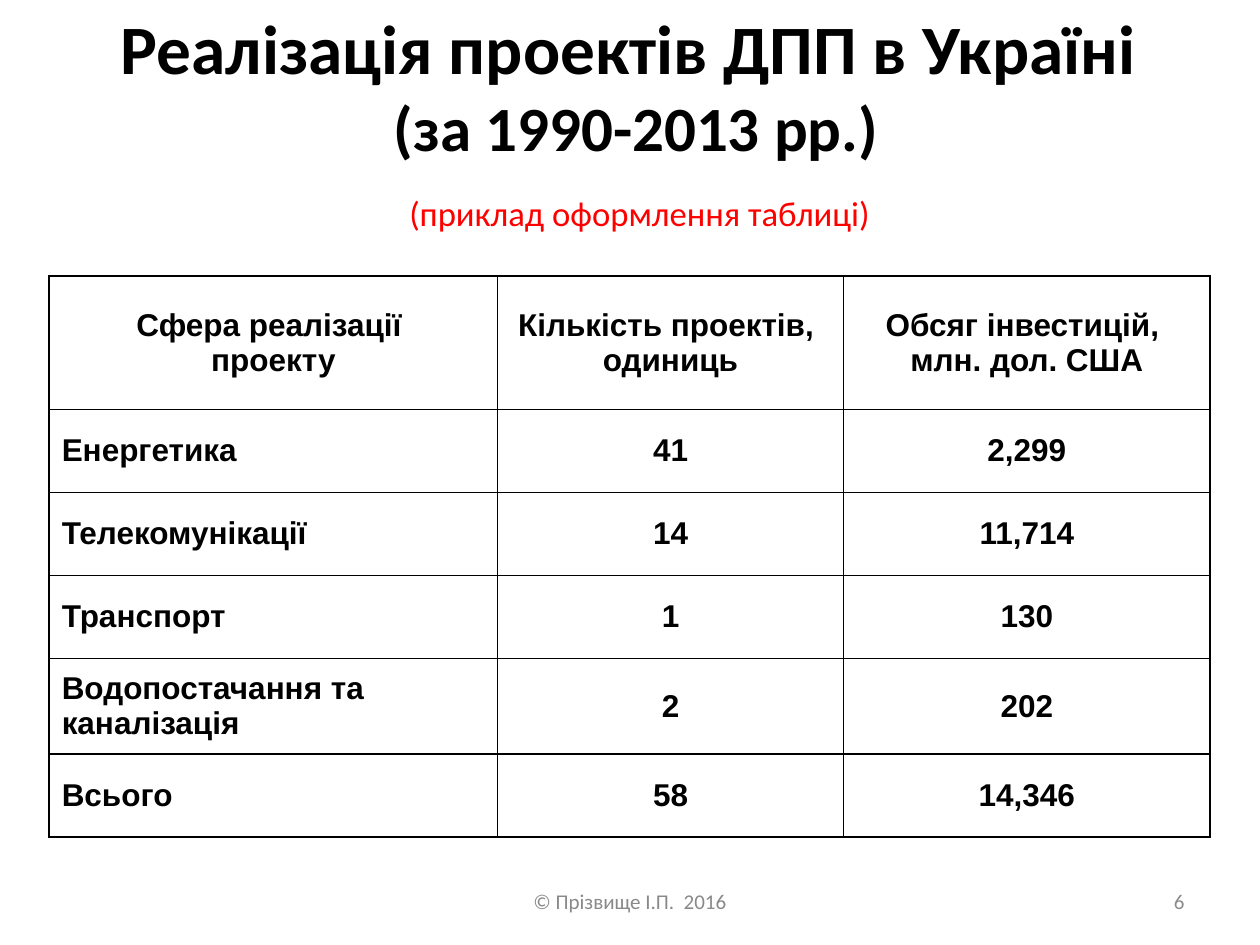
from dataclasses import dataclass

from lxml.etree import SubElement
from pptx import Presentation
from pptx.dml.color import RGBColor as Color
from pptx.enum.text import MSO_ANCHOR as Anchor, MSO_AUTO_SIZE as AutoSize, PP_ALIGN as Align
from pptx.oxml.ns import qn
from pptx.util import Pt


@dataclass(frozen=True)
class Theme:
    heading_font: str = "Calibri"
    table_font: str = "Arial"
    ink: str = "000000"
    accent: str = "FF0000"
    footer_ink: str = "898989"
    number_ink: str = "8C8C8C"
    title_size: float = 39.6
    period_size: float = 36
    hint_size: float = 19.8
    table_size: float = 18
    footer_size: float = 12


@dataclass(frozen=True)
class Span:
    text: str
    size: float
    font: str
    color: str
    bold: bool = False


@dataclass(frozen=True)
class Label:
    span: Span
    left: float
    width: float
    align: Align


THEME = Theme()
HANGING = 27
FOOTER_TOP, FOOTER_HEIGHT = 500.5, 28.75
COLUMNS = (256.3, 197.6, 209.6)
ROWS = (76.3, 47.4, 47.4, 47.4, 54.8, 47.4)

TITLE_LINES = (
    (Span("Реалізація проектів ДПП в Україні ", THEME.title_size, THEME.heading_font, THEME.ink, True),),
    (Span("(за 1990-2013 рр.)", THEME.period_size, THEME.heading_font, THEME.ink, True),),
    (
        Span(" ", THEME.period_size, THEME.heading_font, THEME.ink, True),
        Span("(приклад оформлення таблиці) ", THEME.hint_size, THEME.heading_font, THEME.accent),
    ),
)

TABLE_ROWS = (
    ("Сфера реалізації \nпроекту", "Кількість проектів, \nодиниць", "Обсяг інвестицій, \nмлн. дол. США"),
    ("Енергетика", "41", "2,299"),
    ("Телекомунікації", "14", "11,714"),
    ("Транспорт", "1", "130"),
    ("Водопостачання та каналізація", "2", "202"),
    ("Всього", "58", "14,346"),
)
UNINDENTED = "Водопостачання та каналізація"

LABELS = (
    Label(Span("6", THEME.footer_size, THEME.heading_font, THEME.number_ink), 516, 168, Align.RIGHT),
    Label(
        Span("© Прізвище І.П.  2016", THEME.footer_size, THEME.heading_font, THEME.footer_ink),
        246, 228, Align.CENTER,
    ),
)


def apply(target, formats: dict) -> None:
    for name, value in formats.items():
        setattr(target, name, value)


def add_span(para, span: Span) -> None:
    run = para.add_run()
    run.text = span.text
    apply(run.font, {"name": span.font, "size": Pt(span.size), "bold": span.bold})
    run.font.color.rgb = Color.from_string(span.color)


def place(shape, left: float, top: float, width: float, height: float) -> None:
    apply(shape, {"left": Pt(left), "top": Pt(top), "width": Pt(width), "height": Pt(height)})


def draw_title(page) -> None:
    title = page.shapes.title
    place(title, 39.6, 44.6, 648, 90)
    apply(title.text_frame, {
        "vertical_anchor": Anchor.MIDDLE, "word_wrap": True,
        "auto_size": AutoSize.NONE, "margin_bottom": Pt(43),
    })
    para = title.text_frame.paragraphs[0]
    para.alignment = Align.CENTER
    for index, line in enumerate(TITLE_LINES):
        if index:
            para.add_line_break()
        for span in line:
            add_span(para, span)


def draw_label(page, label: Label) -> None:
    box = page.shapes.add_textbox(Pt(label.left), Pt(FOOTER_TOP), Pt(label.width), Pt(FOOTER_HEIGHT))
    apply(box.text_frame, {"vertical_anchor": Anchor.MIDDLE, "word_wrap": True})
    para = box.text_frame.paragraphs[0]
    para.alignment = label.align
    add_span(para, label.span)


def draw_borders(cell) -> None:
    properties = cell._tc.get_or_add_tcPr()
    for index, side in enumerate(("lnL", "lnR", "lnT", "lnB")):
        line = SubElement(properties, qn(f"a:{side}"), w=str(Pt(1)))
        fill = SubElement(line, qn("a:solidFill"))
        SubElement(fill, qn("a:srgbClr"), val=THEME.ink)
        properties.insert(index, line)


def fill_cell(cell, text: str, align: Align) -> None:
    cell.fill.background()
    cell.vertical_anchor = Anchor.MIDDLE
    draw_borders(cell)
    cell.text = text
    for para, line in zip(cell.text_frame.paragraphs, text.split("\n")):
        para.clear()
        para.alignment = align
        if text != UNINDENTED:
            indents = para._p.get_or_add_pPr()
            indents.set("marL", str(Pt(HANGING)))
            indents.set("indent", str(Pt(-HANGING)))
        add_span(para, Span(line, THEME.table_size, THEME.table_font, THEME.ink, True))


def draw_table(page) -> None:
    frame = page.shapes.add_table(
        len(ROWS), len(COLUMNS), Pt(28.1), Pt(157.7), Pt(sum(COLUMNS)), Pt(sum(ROWS))
    )
    table = frame.table
    apply(table, {"first_row": False, "horz_banding": False})
    for column, width in zip(table.columns, COLUMNS):
        column.width = Pt(width)
    for row, height in zip(table.rows, ROWS):
        row.height = Pt(height)
    for row_index, texts in enumerate(TABLE_ROWS):
        for column_index, text in enumerate(texts):
            align = Align.LEFT if row_index and not column_index else Align.CENTER
            fill_cell(table.cell(row_index, column_index), text, align)


def main() -> None:
    deck = Presentation()
    apply(deck, {"slide_width": Pt(720), "slide_height": Pt(540)})
    page = deck.slides.add_slide(deck.slide_layouts[5])
    draw_title(page)
    draw_table(page)
    for label in LABELS:
        draw_label(page, label)
    deck.save("out.pptx")


if __name__ == "__main__":
    main()
